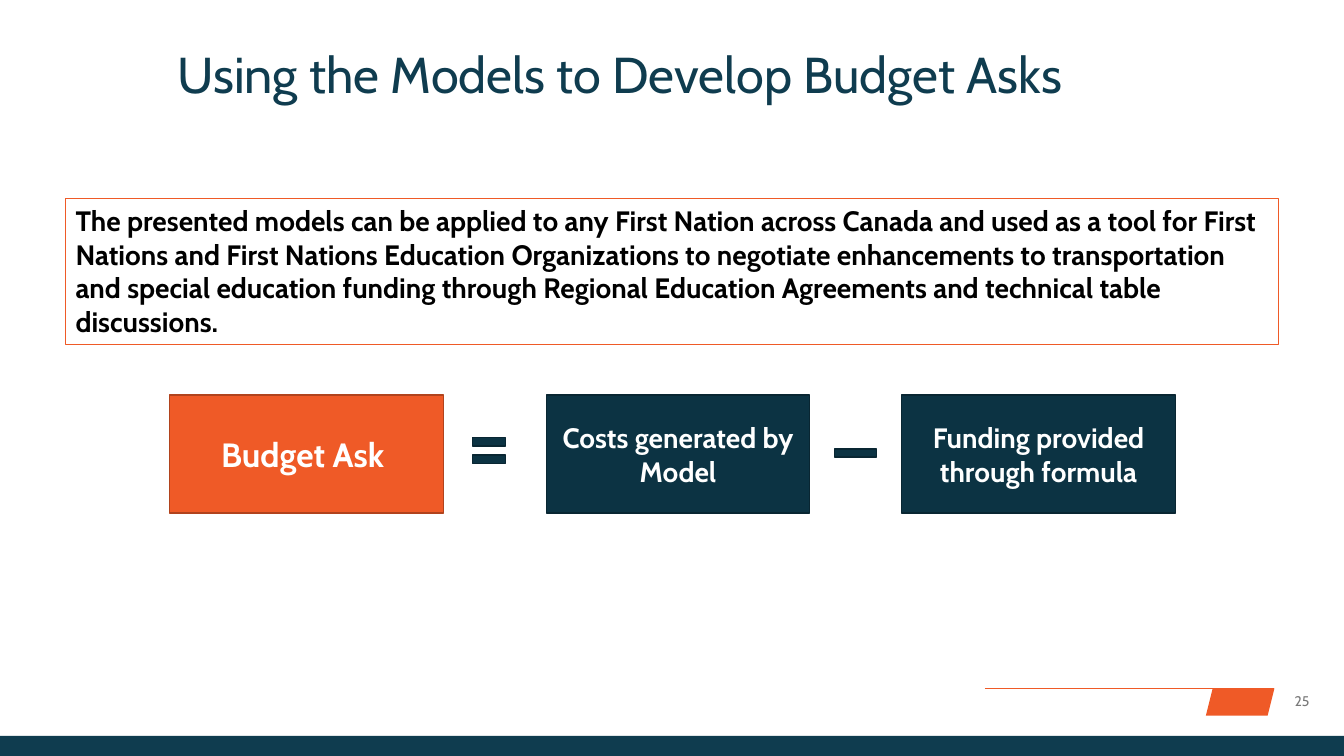
from dataclasses import dataclass
from typing import Any

from lxml import etree
from pptx import Presentation
from pptx.dml.color import RGBColor
from pptx.enum.shapes import MSO_CONNECTOR, MSO_SHAPE
from pptx.enum.text import MSO_ANCHOR, PP_ALIGN
from pptx.oxml.ns import qn
from pptx.util import Emu, Inches, Pt

LEFT, CENTER = PP_ALIGN.LEFT, PP_ALIGN.CENTER
TOP, MIDDLE = MSO_ANCHOR.TOP, MSO_ANCHOR.MIDDLE
RECTANGLE, SLANTED = MSO_SHAPE.RECTANGLE, MSO_SHAPE.PARALLELOGRAM
EQUAL, MINUS = MSO_SHAPE.MATH_EQUAL, MSO_SHAPE.MATH_MINUS
STRAIGHT = MSO_CONNECTOR.STRAIGHT

WIDTH, HEIGHT = Inches(13.33), Inches(7.5)
FONT = "Cabin"
ORANGE, ORANGE_EDGE = "EF5A27", "B1431D"
NAVY, NAVY_EDGE = "0C3343", "092632"
TEAL, GREY, WHITE, BLACK = "0F3C4F", "797979", "FFFFFF", "000000"

# Shares of the slide, in percent of its width or height
FORMULA_TOP, FORMULA_HEIGHT = 52.27, 15.6
FOOTER_TOP, FOOTER_LEFT, FOOTER_RIGHT = 91.07, 73.29, 94.82


@dataclass(frozen=True)
class Area:
    """Left, top, width and height in percent of the slide."""
    left: float
    top: float
    width: float
    height: float

    def emu(self) -> tuple[Emu, Emu, Emu, Emu]:
        return (across(self.left), down(self.top),
                across(self.width), down(self.height))


@dataclass(frozen=True)
class Label:
    text: str
    size: float
    color: str
    bold: bool = True
    align: Any = CENTER
    anchor: Any = MIDDLE
    side_inset: float = 0.1
    end_inset: float = 0.05
    line_spacing: float = 1.0


@dataclass(frozen=True)
class Block:
    area: Area
    fill: str
    edge: str | None = None
    label: Label | None = None
    preset: Any = RECTANGLE
    adjustments: tuple[float, ...] = ()


def across(share: float) -> Emu:
    return Emu(round(WIDTH * share / 100))


def down(share: float) -> Emu:
    return Emu(round(HEIGHT * share / 100))


def rgb(color: str) -> RGBColor:
    return RGBColor.from_string(color)


def write(shape: Any, label: Label) -> None:
    frame = shape.text_frame
    frame.word_wrap = True
    frame.vertical_anchor = label.anchor
    frame.margin_left = frame.margin_right = Inches(label.side_inset)
    frame.margin_top = frame.margin_bottom = Inches(label.end_inset)
    frame.text = label.text
    paragraph = frame.paragraphs[0]
    paragraph.alignment = label.align
    paragraph.line_spacing = label.line_spacing
    for run in paragraph.runs:
        run.font.name = FONT
        run.font.size = Pt(label.size)
        run.font.bold = label.bold
        run.font.color.rgb = rgb(label.color)


def draw_block(slide: Any, block: Block) -> None:
    shape = slide.shapes.add_shape(block.preset, *block.area.emu())
    shape.shadow.inherit = False
    shape.fill.solid()
    shape.fill.fore_color.rgb = rgb(block.fill)
    if block.edge:
        shape.line.color.rgb = rgb(block.edge)
        shape.line.width = Pt(1)
    else:
        shape.line.fill.background()
    for index, value in enumerate(block.adjustments):
        shape.adjustments[index] = value
    if block.label:
        write(shape, block.label)


def draw_text(slide: Any, area: Area, label: Label) -> None:
    write(slide.shapes.add_textbox(*area.emu()), label)


def draw_footer_rule(slide: Any) -> None:
    rule = slide.shapes.add_connector(
        STRAIGHT, across(FOOTER_LEFT), down(FOOTER_TOP),
        across(FOOTER_RIGHT), down(FOOTER_TOP))
    rule.line.color.rgb = rgb(ORANGE)
    rule.line.width = Pt(1)
    etree.SubElement(rule._element.spPr, qn("a:effectLst"))


def formula_box(left: float, width: float, fill: str, edge: str,
                text: str, size: float) -> Block:
    area = Area(left, FORMULA_TOP, width, FORMULA_HEIGHT)
    return Block(area, fill, edge, Label(text, size, WHITE))


STATEMENT = (
    "The presented models can be applied to any First Nation across Canada and "
    "used as a tool for First Nations and First Nations Education Organizations "
    "to negotiate enhancements to transportation and special education funding "
    "through Regional Education Agreements and technical table discussions."
)

FOOTER_BLOCKS = (
    Block(Area(89.72, FOOTER_TOP, 5.1, 3.6), ORANGE, preset=SLANTED),
    Block(Area(0, 97.33, 100, 2.67), TEAL),
)

CONTENT_BLOCKS = (
    formula_box(12.6, 20.4, ORANGE, ORANGE_EDGE, "Budget Ask ", 24),
    formula_box(40.66, 19.58, NAVY, NAVY_EDGE, "Costs generated by Model", 20),
    formula_box(67.07, 20.4, NAVY, NAVY_EDGE, "Funding provided through formula", 20),
    Block(Area(34.73, 57.2, 3.3, 4.8), NAVY, NAVY_EDGE,
          preset=EQUAL, adjustments=(0.235, 0.25)),
    Block(Area(61.52, 57.73, 4.28, 4.4), NAVY, NAVY_EDGE, preset=MINUS),
    Block(Area(4.88, 26.27, 90.25, 19.33), WHITE, ORANGE,
          Label(STATEMENT, 20, BLACK, align=LEFT, anchor=TOP)),
)

TEXTS = (
    (Area(13.2, 6.67, 70.67, 7.33),
     Label("Using the Models to Develop Budget Asks", 36, TEAL, bold=False,
           align=LEFT, anchor=TOP, side_inset=0, end_inset=0, line_spacing=0.9)),
    (Area(FOOTER_RIGHT, 90.93, 4.13, 3.6),
     Label("25", 10, GREY, bold=False, side_inset=0)),
)


def main() -> None:
    deck = Presentation()
    deck.slide_width, deck.slide_height = WIDTH, HEIGHT
    slide = deck.slides.add_slide(deck.slide_layouts[6])
    for block in FOOTER_BLOCKS:
        draw_block(slide, block)
    draw_footer_rule(slide)
    for area, label in TEXTS:
        draw_text(slide, area, label)
    for block in CONTENT_BLOCKS:
        draw_block(slide, block)
    deck.save("out.pptx")


if __name__ == "__main__":
    main()
